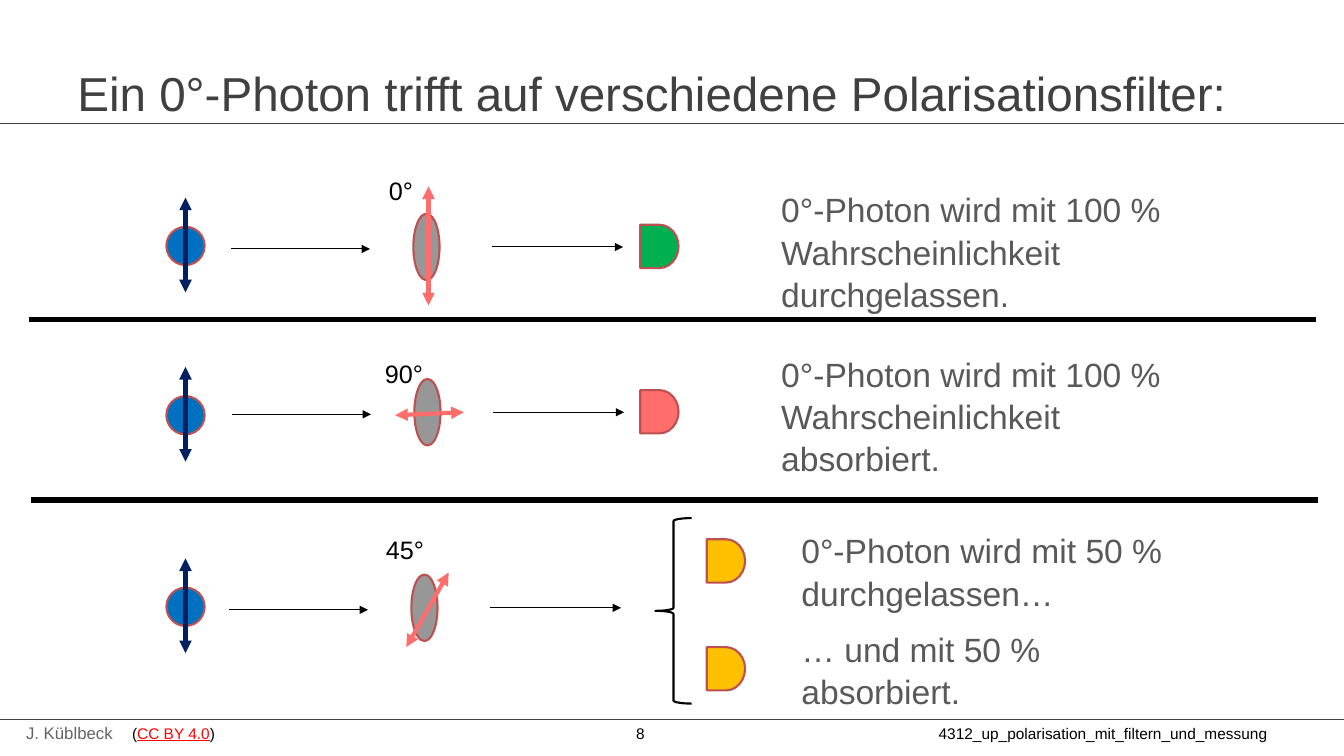
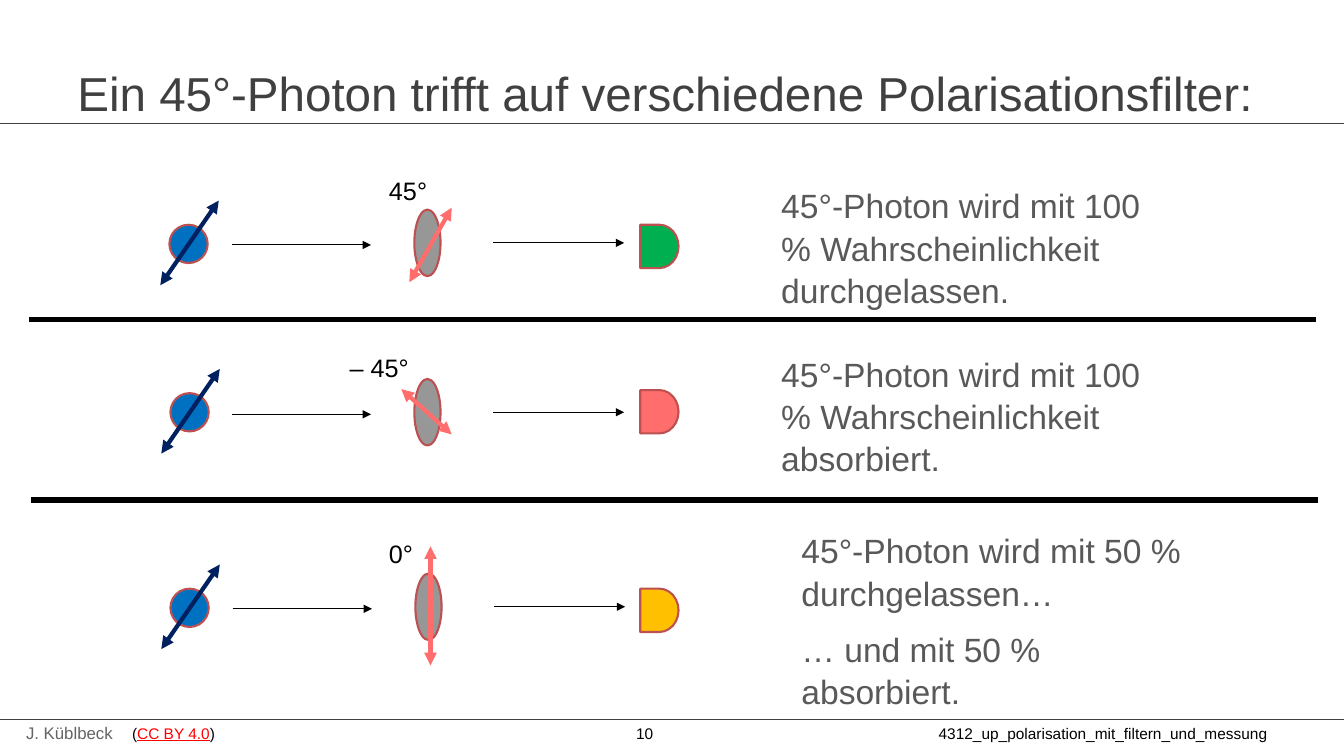
from lxml import etree
from pptx import Presentation
from pptx import util as u
from pptx.dml import color
from pptx.enum import shapes, text
from pptx.oxml import ns

FONT = "Arial"
BLACK, RULE, TITLE, BODY, AUTHOR, LINK = "000000", "404040", "404040", "595959", "646464", "FF0000"
OUTLINE, PHOTON, PHOTON_AXIS = "BD5151", "0070C0", "002060"
FILTER, FILTER_AXIS = "979797", "FF6D6D"
GREEN, RED, AMBER = "00B050", "FF6D6D", "FFC000"

FILTER_AXES = {
    "0°": ((0.02, -0.6), (0.02, 0.58)),
    "90°": ((0.36, 0), (-0.32, 0.03)),
    "45°": ((0.24, -0.35), (-0.18, 0.39)),
    "– 45°": ((0.24, 0.22), (-0.26, -0.23)),
}
PHOTON_AXES = {
    "0°": ((0, -0.48), (0, 0.46)),
    "45°": ((0.3, -0.43), (-0.28, 0.41)),
}


def rgb(value):
    return color.RGBColor.from_string(value)


def write(paragraph, content, size=18, hue=BLACK, underline=False):
    for index, line in enumerate(content.split("\n")):
        if index:
            paragraph.add_line_break()
        run = paragraph.add_run()
        run.text = line
        run.font.name = FONT
        run.font.size = u.Pt(size)
        run.font.color.rgb = rgb(hue)
        run.font.underline = underline


class Deck:
    def __init__(self):
        self.presentation = Presentation()
        self.presentation.slide_width = u.Inches(13.33)
        self.presentation.slide_height = u.Inches(7.5)
        self.slide = None

    def new_slide(self, title, number):
        self.slide = self.presentation.slides.add_slide(self.presentation.slide_layouts[6])
        self.line((0, 7.14), (13.33, 7.14), RULE)
        self.line((0, 1.23), (13.33, 1.23), RULE)
        self.text_box(0.67, 0.6, 12, 0.63, title, size=34, hue=TITLE).vertical_anchor = text.MSO_ANCHOR.MIDDLE
        self.text_box(0.16, 7.12, 1.55, 0.3, "J. Küblbeck", size=12, hue=AUTHOR)
        licence = self.text_box(1.31, 7.18, 2, 0.19, "(", inset=False, size=11).paragraphs[0]
        write(licence, "CC BY 4.0", size=11, hue=LINK, underline=True)
        write(licence, ")", size=11)
        self.text_box(6.31, 7.18, 1, 0.19, str(number), inset=False, size=11)
        self.text_box(9.31, 7.18, 3.73, 0.19, "4312_up_polarisation_mit_filtern_und_messung",
                      inset=False, size=11)
        self.line((0.29, 3.17), (13.05, 3.17), BLACK, 3.75)
        self.line((0.31, 4.96), (13.07, 4.96), BLACK, 3.75)

    def text_box(self, left, top, width, height, content, inset=True, **style):
        box = self.slide.shapes.add_textbox(*map(u.Inches, (left, top, width, height)))
        frame = box.text_frame
        frame.word_wrap = True
        if not inset:
            frame.margin_left = frame.margin_right = frame.margin_top = frame.margin_bottom = 0
        write(frame.paragraphs[0], content, **style)
        return frame

    def statement(self, left, top, content, width=4.59, height=1.34):
        frame = self.text_box(left, top, width, height, content, size=24, hue=BODY)
        paragraph = frame.paragraphs[0]
        paragraph.space_before = u.Pt(3)
        paragraph.line_spacing = 1.05
        paragraph._p.get_or_add_pPr().set("marL", str(u.Inches(0.45)))

    def line(self, start, end, hue, width=0.75, heads=()):
        points = map(u.Inches, (*start, *end))
        connector = self.slide.shapes.add_connector(shapes.MSO_CONNECTOR.STRAIGHT, *points)
        connector.line.color.rgb = rgb(hue)
        connector.line.width = u.Pt(width)
        outline = connector.line._get_or_add_ln()
        for head in heads:
            etree.SubElement(outline, ns.qn(f"a:{head}"), type="triangle")
        etree.SubElement(connector._element.spPr, ns.qn("a:effectLst"))

    def shape(self, kind, left, top, width, height, fill=None, outline=OUTLINE):
        shape = self.slide.shapes.add_shape(kind, *map(u.Inches, (left, top, width, height)))
        shape.shadow.inherit = False
        if fill:
            shape.fill.solid()
            shape.fill.fore_color.rgb = rgb(fill)
        else:
            shape.fill.background()
        shape.line.color.rgb = rgb(outline)
        shape.line.width = u.Pt(1.5)

    def polarised(self, center, width, height, fill, axis, hue):
        x, y = center
        self.shape(shapes.MSO_SHAPE.OVAL, x - width / 2, y - height / 2, width, height, fill)
        start, end = [(x + dx, y + dy) for dx, dy in axis]
        self.line(start, end, hue, 3, ("headEnd", "tailEnd"))

    def detector(self, left, top, fill):
        self.shape(shapes.MSO_SHAPE.FLOWCHART_DELAY, left, top, 0.38, 0.43, fill)

    def brace(self, left, top, width, height):
        self.shape(shapes.MSO_SHAPE.LEFT_BRACE, left, top, width, height, outline=BLACK)

    def experiment(self, photon_angle, photon, filter_angle, center, label):
        x, y = center
        self.polarised(photon, 0.38, 0.38, PHOTON, PHOTON_AXES[photon_angle], PHOTON_AXIS)
        self.line((x - 1.94, y + 0.02), (x - 0.56, y + 0.02), BLACK, heads=("tailEnd",))
        self.polarised(center, 0.26, 0.66, FILTER, FILTER_AXES[filter_angle], FILTER_AXIS)
        self.line((x + 0.65, y), (x + 1.95, y), BLACK, heads=("tailEnd",))
        self.text_box(*label, 1, 0.4, filter_angle)


SLIDES = [
    dict(
        number=8, angle="0°", first_statement=1.81,
        experiments=[
            ((1.84, 2.44), "0°", (4.23, 2.45), (3.76, 1.69)),
            ((1.84, 4.12), "90°", (4.24, 4.09), (3.72, 3.51)),
            ((1.84, 6.02), "45°", (4.21, 6.03), (3.73, 5.25)),
        ],
        split_detectors=[(7.01, 5.35), (7.01, 6.42)], brace=(6.5, 5.14, 0.36, 1.84),
    ),
    dict(
        number=10, angle="45°", first_statement=1.77,
        experiments=[
            ((1.87, 2.42), "45°", (4.24, 2.41), (3.76, 1.69)),
            ((1.88, 4.09), "– 45°", (4.24, 4.09), (3.37, 3.45)),
            ((1.88, 6.03), "0°", (4.25, 6.02), (3.76, 5.29)),
        ],
        split_detectors=[(6.35, 5.84)], brace=None,
    ),
]


def main():
    deck = Deck()
    for content in SLIDES:
        angle = content["angle"]
        deck.new_slide(f"Ein {angle}-Photon trifft auf verschiedene Polarisationsfilter:", content["number"])
        for photon, filter_angle, center, label in content["experiments"]:
            deck.experiment(angle, photon, filter_angle, center, label)
        deck.detector(6.35, 2.23, GREEN)
        deck.detector(6.35, 3.87, RED)
        for left, top in content["split_detectors"]:
            deck.detector(left, top, AMBER)
        if content["brace"]:
            deck.brace(*content["brace"])
        certain = f"{angle}-Photon wird mit 100 % Wahrscheinlichkeit"
        deck.statement(7.2, content["first_statement"], f"{certain} durchgelassen.")
        deck.statement(7.2, 3.44, f"{certain} absorbiert.")
        deck.statement(7.4, 5.19, f"{angle}-Photon wird mit 50 % durchgelassen…", height=1.12)
        deck.statement(7.4, 6.17, "… und mit 50 %\nabsorbiert.", width=4.18, height=1.12)
    deck.presentation.save("out.pptx")


if __name__ == "__main__":
    main()
